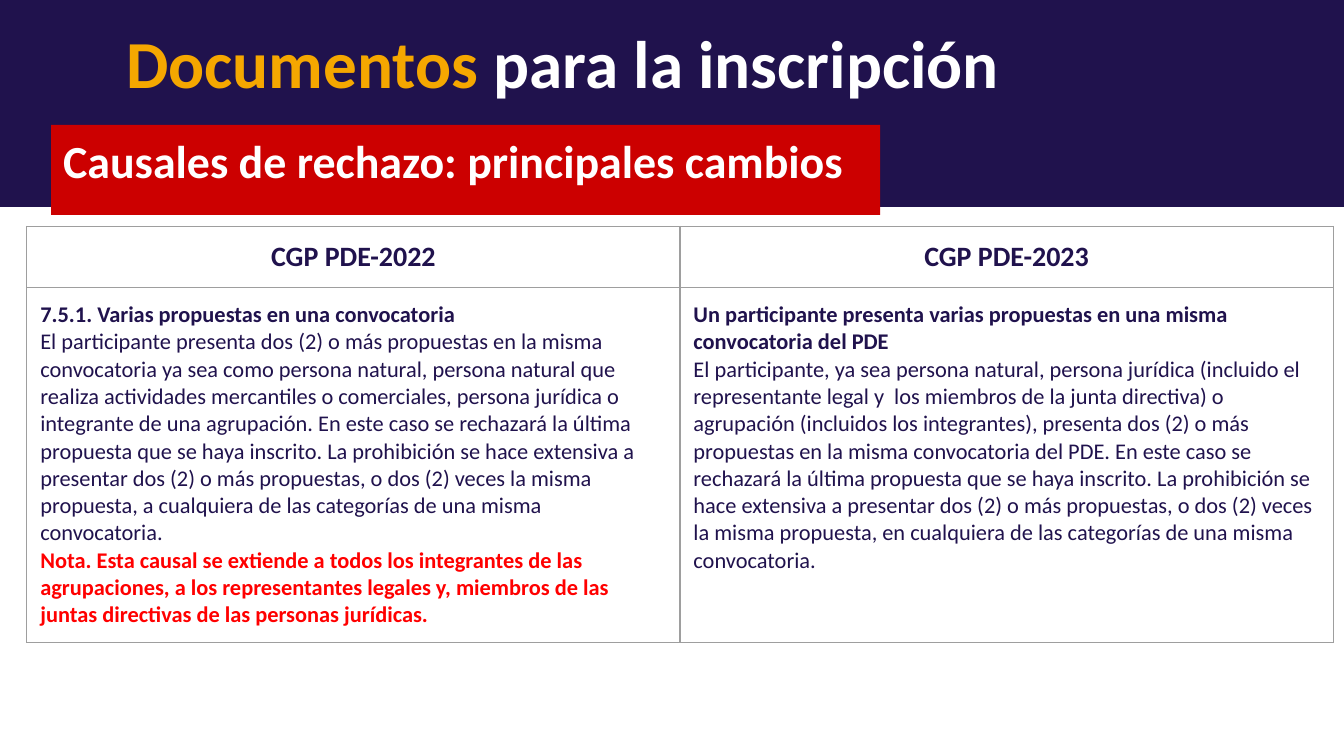
from lxml.etree import SubElement
from pptx import Presentation
from pptx.dml.color import RGBColor
from pptx.enum.shapes import MSO_SHAPE
from pptx.enum.text import MSO_ANCHOR, PP_ALIGN
from pptx.oxml.ns import qn
from pptx.util import Inches, Pt

NAVY, RED, GOLD, WHITE = "20124D", "CC0000", "F5A700", "FFFFFF"
NOTE, EDGE = "FF0000", "9E9E9E"

HEADS = ["CGP PDE-2022", "CGP PDE-2023"]
# Each paragraph: text, bold, colour
OLD = [
    ("7.5.1. Varias propuestas en una convocatoria", True, NAVY),
    ("El participante presenta dos (2) o más propuestas en la misma convocatoria ya sea "
     "como persona natural, persona natural que realiza actividades mercantiles o "
     "comerciales, persona jurídica o integrante de una agrupación. En este caso se "
     "rechazará la última propuesta que se haya inscrito. La prohibición se hace extensiva "
     "a presentar dos (2) o más propuestas, o dos (2) veces la misma", False, NAVY),
    ("propuesta, a cualquiera de las categorías de una misma convocatoria.", False, NAVY),
    ("Nota. Esta causal se extiende a todos los integrantes de las agrupaciones, a los "
     "representantes legales y, miembros de las juntas directivas de las personas "
     "jurídicas.", True, NOTE),
]
NEW = [
    ("Un participante presenta varias propuestas en una misma convocatoria del PDE",
     True, NAVY),
    ("El participante, ya sea persona natural, persona jurídica (incluido el representante "
     "legal y  los miembros de la junta directiva) o agrupación (incluidos los "
     "integrantes), presenta dos (2) o más propuestas en la misma convocatoria del PDE. En "
     "este caso se rechazará la última propuesta que se haya inscrito. La prohibición se "
     "hace extensiva a presentar dos (2) o más propuestas, o dos (2) veces la misma "
     "propuesta, en cualquiera de las categorías de una misma convocatoria.", False, NAVY),
]


def tint(code):
    return RGBColor.from_string(code)


def write(par, text, size=12, color=NAVY, bold=True, align=PP_ALIGN.LEFT):
    par.alignment = align
    par.space_before = Pt(0)
    run = par.add_run()
    run.text = text
    font = run.font
    font.name, font.size, font.bold = "Calibri", Pt(size), bold
    font.color.rgb = tint(color)


class Deck:
    """Style and current slide, on a grid of 100 columns by 56.25 rows."""

    unit = Inches(0.1)
    inset = Inches(0.1)

    def __init__(self):
        self.file = Presentation()
        self.file.slide_width, self.file.slide_height = self.span(100, 56.25)
        self.slide = self.file.slides.add_slide(self.file.slide_layouts[0])
        self.shapes = self.slide.shapes

    def span(self, *cells):
        return [round(n * self.unit) for n in cells]

    def pad(self, box):
        box.margin_left = box.margin_right = self.inset
        box.margin_top = box.margin_bottom = self.inset

    def block(self, color, *place):
        shape = self.shapes.add_shape(MSO_SHAPE.RECTANGLE, *self.span(*place))
        shape.shadow.inherit = False
        shape.fill.solid()
        shape.fill.fore_color.rgb = tint(color)
        shape.line.fill.background()

    def head(self, index, parts, size, anchor, *place):
        """Move a placeholder to the front and fill it with coloured parts."""
        holder = self.slide.placeholders[index]
        holder.left, holder.top, holder.width, holder.height = self.span(*place)
        self.shapes._spTree.append(holder._element)
        frame = holder.text_frame
        frame.word_wrap = True
        frame.vertical_anchor = anchor
        self.pad(frame)
        for text, color in parts:
            write(frame.paragraphs[0], text, size=size, color=color)

    def edge(self, cell):
        """Draw a thin line on all four sides of a cell."""
        props = cell._tc.get_or_add_tcPr()
        for side in "LRTB":
            line = SubElement(props, qn(f"a:ln{side}"), w=str(Pt(0.75)))
            fill = SubElement(line, qn("a:solidFill"))
            SubElement(fill, qn("a:srgbClr"), val=EDGE)

    def cell(self, cell, pars, **style):
        self.edge(cell)
        cell.fill.solid()
        cell.fill.fore_color.rgb = tint(WHITE)
        self.pad(cell)
        frame = cell.text_frame
        for i, (text, bold, color) in enumerate(pars):
            par = frame.add_paragraph() if i else frame.paragraphs[0]
            write(par, text, bold=bold, color=color, **style)

    def table(self, heads, bodies, left, top, width, rows):
        place = self.span(left, top, width, sum(rows))
        grid = self.shapes.add_table(len(rows), len(heads), *place).table
        for row, high in zip(grid.rows, self.span(*rows)):
            row.height = high
        for col, (head, body) in enumerate(zip(heads, bodies)):
            self.cell(grid.cell(0, col), [(head, True, NAVY)],
                      size=15, align=PP_ALIGN.CENTER)
            self.cell(grid.cell(1, col), body)


def main():
    deck = Deck()
    deck.block(NAVY, 0, 0, 100, 15.4)
    deck.head(0, [("Documentos", GOLD), (" para la inscripción", WHITE)],
              36, MSO_ANCHOR.MIDDLE, 8.4, 1.4, 82.7, 6.3)
    deck.block(RED, 3.8, 9.3, 61.7, 6.7)
    deck.head(1, [("Causales de rechazo: principales cambios", WHITE)],
              24.6, MSO_ANCHOR.TOP, 3.7, 8.9, 61.7, 11.4)
    deck.table(HEADS, [OLD, NEW], 2, 16.86, 97.2, [4.1, 26])
    deck.file.save("out.pptx")


if __name__ == "__main__":
    main()
